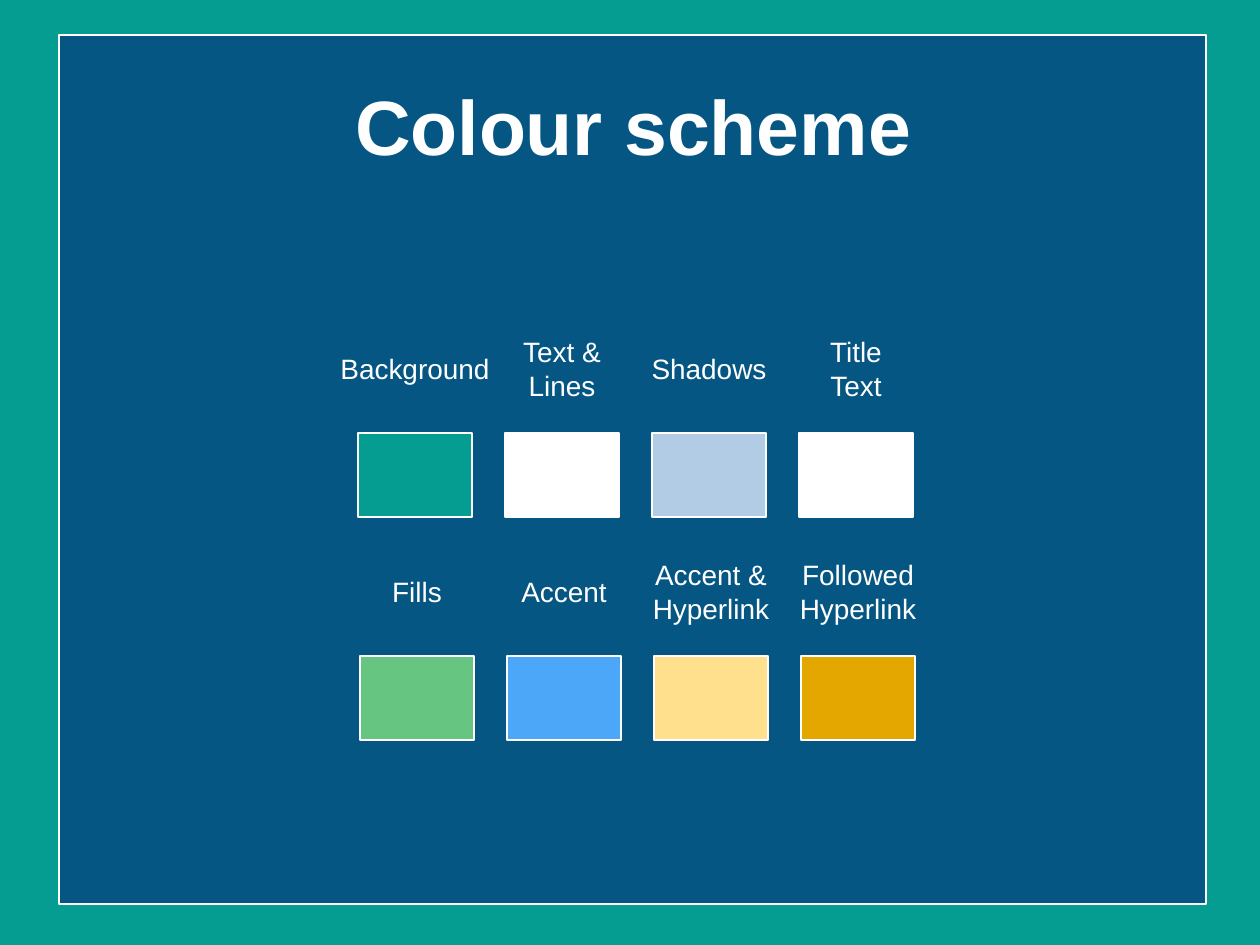
import pptx
import pptx.dml.color
import pptx.enum.shapes
import pptx.enum.text
import pptx.oxml
import pptx.oxml.ns
import pptx.util

RGBColor = pptx.dml.color.RGBColor
TEAL = RGBColor(0x05, 0x9D, 0x92)
NAVY = RGBColor(0x07, 0x11, 0x76)
WHITE = RGBColor(0xFF, 0xFF, 0xFF)
PALE_BLUE = RGBColor(0xB3, 0xCC, 0xE6)
GREEN = RGBColor(0x66, 0xC5, 0x80)
BLUE = RGBColor(0x4D, 0xA7, 0xF8)
YELLOW = RGBColor(0xFF, 0xE0, 0x8C)
AMBER = RGBColor(0xE3, 0xA7, 0x00)

PX = 914400 / 126
SWATCH_WIDTH, SWATCH_HEIGHT, SWATCH_PITCH = 114, 84, 147


def add_rectangle(left, top, width, height, color):
    box = [round(value * PX) for value in (left, top, width, height)]
    shape = slide.shapes.add_shape(pptx.enum.shapes.MSO_SHAPE.RECTANGLE, *box)
    shape.shadow.inherit = False
    shape.fill.solid()
    shape.fill.fore_color.rgb = color
    shape.line.color.rgb = WHITE
    shape.line.width = pptx.util.Pt(0.75)
    return shape


def write_text(shape, text, size, bold=False, wrap=False,
               auto_size=pptx.enum.text.MSO_AUTO_SIZE.SHAPE_TO_FIT_TEXT,
               anchor=pptx.enum.text.MSO_ANCHOR.TOP):
    frame = shape.text_frame
    frame.text = text
    frame.word_wrap = wrap
    frame.auto_size = auto_size
    frame.vertical_anchor = anchor
    for paragraph in frame.paragraphs:
        paragraph.alignment = pptx.enum.text.PP_ALIGN.CENTER
        paragraph.font.name = "Arial"
        paragraph.font.size = pptx.util.Pt(size)
        paragraph.font.bold = bold
        paragraph.font.color.rgb = WHITE


presentation = pptx.Presentation()
presentation.slide_width = pptx.util.Inches(10)
presentation.slide_height = pptx.util.Inches(7.5)
slide = presentation.slides.add_slide(presentation.slide_layouts[5])
slide.background.fill.solid()
slide.background.fill.fore_color.rgb = TEAL

# Half-transparent panel, sent behind the title
panel = add_rectangle(59, 35, 1147, 869, NAVY)
panel_color = panel._element.spPr.find(".//" + pptx.oxml.ns.qn("a:srgbClr"))
panel_color.append(pptx.oxml.parse_xml(
    f'<a:alpha {pptx.oxml.ns.nsdecls("a")} val="50000"/>'))
slide.shapes._spTree.insert(2, panel._element)

title = slide.shapes.title
title.left, title.top = round(62 * PX), round(40 * PX)
title.width, title.height = round(1143 * PX), round(169 * PX)
write_text(title, "Colour scheme", 44, bold=True, wrap=True,
           auto_size=pptx.enum.text.MSO_AUTO_SIZE.NONE,
           anchor=pptx.enum.text.MSO_ANCHOR.MIDDLE)

# Each row: left of first swatch, top of swatches, middle of labels,
# then (label, label width, swatch colour)
rows = [
    (358, 433, 369, [("Background", 178, TEAL), ("Text &\nLines", 108, WHITE),
                     ("Shadows", 144, PALE_BLUE), ("Title\vText", 82, WHITE)]),
    (360, 656, 592, [("Fills", 80, GREEN), ("Accent", 114, BLUE),
                     ("Accent &\nHyperlink", 146, YELLOW),
                     ("Followed\nHyperlink", 146, AMBER)]),
]
for first_left, swatch_top, label_middle, swatches in rows:
    for column, (label, label_width, color) in enumerate(swatches):
        left = first_left + column * SWATCH_PITCH
        add_rectangle(left, swatch_top, SWATCH_WIDTH, SWATCH_HEIGHT, color)

        label_height = 47 if len(label.splitlines()) == 1 else 81
        label_left = left + (SWATCH_WIDTH - label_width) / 2
        label_top = label_middle - label_height / 2
        label_box = slide.shapes.add_textbox(
            round(label_left * PX), round(label_top * PX),
            round(label_width * PX), round(label_height * PX))
        write_text(label_box, label, 16)

presentation.save("out.pptx")
